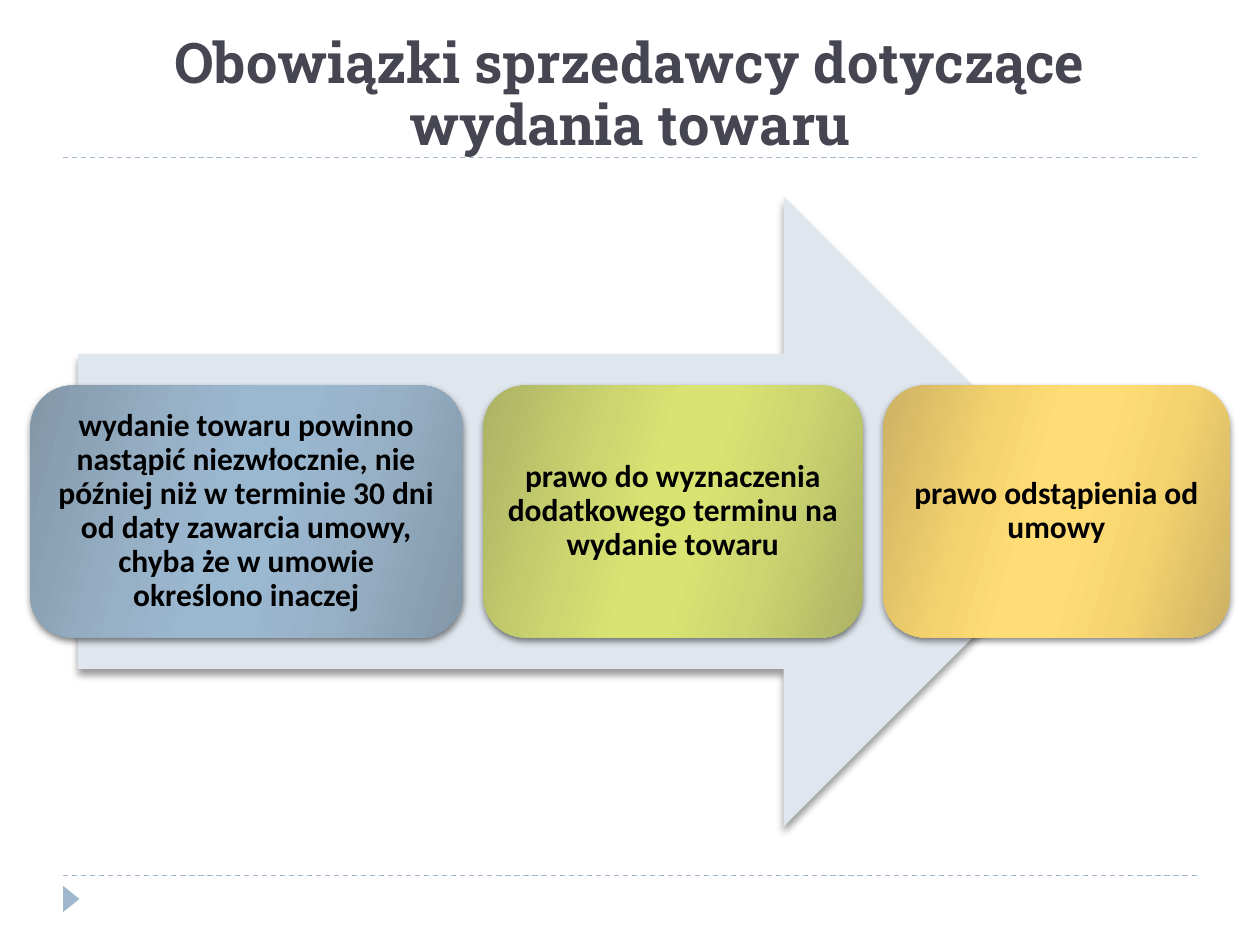
import pptx
import pptx.util
import pptx.dml.color
import pptx.enum.dml
import pptx.enum.shapes
import pptx.enum.text
import pptx.oxml.ns
from lxml import etree

Inches = pptx.util.Inches
Pt = pptx.util.Pt
RGBColor = pptx.dml.color.RGBColor
SHAPE = pptx.enum.shapes.MSO_SHAPE
ANCHOR = pptx.enum.text.MSO_ANCHOR
CENTER = pptx.enum.text.PP_ALIGN.CENTER
qn = pptx.oxml.ns.qn

INK = RGBColor(0x46, 0x46, 0x53)
BLACK = RGBColor(0, 0, 0)
STEEL = RGBColor(0x9F, 0xB8, 0xCD)
PALE = RGBColor(0xDF, 0xE6, 0xED)

# Edge, middle and centre colours of each card
BLUE = [RGBColor(0x82, 0x97, 0xA8), RGBColor(0x96, 0xB0, 0xC6), RGBColor(0x9B, 0xB8, 0xD1)]
GREEN = [RGBColor(0xAC, 0xB2, 0x64), RGBColor(0xCC, 0xD5, 0x70), RGBColor(0xD9, 0xE3, 0x71)]
GOLD = [RGBColor(0xCD, 0xB2, 0x64), RGBColor(0xF5, 0xD3, 0x6E), RGBColor(0xFF, 0xDC, 0x75)]
STOPS = [(0, 0), (30, 1), (45, 2), (55, 2), (73, 1), (100, 0)]

CARDS = [
    (3.43, BLUE, "wydanie towaru powinno nastąpić niezwłocznie, nie później niż w terminie "
                 "30 dni od daty zawarcia umowy, chyba że w umowie określono inaczej"),
    (3.01, GREEN, "prawo do wyznaczenia dodatkowego terminu na wydanie towaru"),
    (2.75, GOLD, "prawo odstąpienia od umowy"),
]


def add_shape(slide, kind, left, top, width, height):
    shape = slide.shapes.add_shape(
        kind, Inches(left), Inches(top), Inches(width), Inches(height))
    shape.shadow.inherit = False
    shape.line.fill.background()
    return shape


def set_solid(shape, color):
    shape.fill.solid()
    shape.fill.fore_color.rgb = color


def set_blend(shape, colors):
    """Fill with a slanted gradient that is lightest in the centre."""
    shape.fill.gradient()
    shape.fill.gradient_angle = 344
    stops = shape._element.spPr.find(".//" + qn("a:gsLst"))
    for old in list(stops):
        stops.remove(old)
    for place, tone in STOPS:
        stop = etree.SubElement(stops, qn("a:gs"), pos=str(place * 1000))
        etree.SubElement(stop, qn("a:srgbClr"), val=str(colors[tone]))


def drop_shadow(shape, dist, alpha):
    effects = shape._element.spPr.find(qn("a:effectLst"))
    shade = etree.SubElement(
        effects, qn("a:outerShdw"), blurRad=str(Pt(4)), dist=str(Pt(dist)),
        dir="5400000", rotWithShape="0")
    color = etree.SubElement(shade, qn("a:srgbClr"), val="000000")
    etree.SubElement(color, qn("a:alpha"), val=str(alpha * 1000))


def style_text(para, font, size, color, spacing):
    para.alignment = CENTER
    para.line_spacing = spacing
    para.font.name = font
    para.font.size = Pt(size)
    para.font.bold = True
    para.font.color.rgb = color


def add_rule(slide, left, top, width):
    rule = slide.shapes.add_connector(
        pptx.enum.shapes.MSO_CONNECTOR.STRAIGHT,
        Inches(left), Inches(top), Inches(left + width), Inches(top))
    rule.line.color.rgb = STEEL
    rule.line.width = Pt(0.75)
    rule.line.dash_style = pptx.enum.dml.MSO_LINE.DASH
    etree.SubElement(rule._element.spPr, qn("a:effectLst"))


def add_header(slide, left, top, width, height):
    add_rule(slide, left, top + height, width)
    title = slide.shapes.title
    title.left, title.top = Inches(left), Inches(top)
    title.width, title.height = Inches(width), Inches(height)
    frame = title.text_frame
    frame.text = "Obowiązki sprzedawcy dotyczące wydania towaru"
    frame.word_wrap = True
    frame.auto_size = pptx.enum.text.MSO_AUTO_SIZE.NONE
    frame.vertical_anchor = ANCHOR.BOTTOM
    frame.margin_top = frame.margin_bottom = 0
    style_text(frame.paragraphs[0], "Roboto Slab", 32, INK, 0.92)


def add_footer(slide, left, top, width):
    add_rule(slide, left, top, width)
    mark = add_shape(slide, SHAPE.ISOSCELES_TRIANGLE, left - 0.04, top + 0.12, 0.21, 0.13)
    mark.rotation = 90
    set_solid(mark, STEEL)


def add_card(slide, left, top, width, height, colors, text):
    card = add_shape(slide, SHAPE.ROUNDED_RECTANGLE, left, top, width, height)
    set_blend(card, colors)
    drop_shadow(card, 2, 50)
    frame = card.text_frame
    frame.text = text
    frame.word_wrap = True
    frame.vertical_anchor = ANCHOR.MIDDLE
    frame.margin_left = frame.margin_right = Inches(0.07)
    frame.margin_top = frame.margin_bottom = Inches(0.07)
    style_text(frame.paragraphs[0], "Calibri", 18, BLACK, 0.9)


def add_process(slide, left, top, width, height):
    """Place an arrow with a row of cards across its middle."""
    arrow = add_shape(slide, SHAPE.RIGHT_ARROW, left + 0.38, top, 8.1, height)
    set_solid(arrow, PALE)
    drop_shadow(arrow, 3.4, 40)
    tall = height * 0.4
    gap = (width - sum(card[0] for card in CARDS)) / (len(CARDS) - 1)
    for wide, colors, text in CARDS:
        add_card(slide, left, top + (height - tall) / 2, wide, tall, colors, text)
        left += wide + gap


def main():
    deck = pptx.Presentation()
    deck.slide_width, deck.slide_height = Inches(10), Inches(7.5)
    slide = deck.slides.add_slide(deck.slide_layouts[5])
    add_header(slide, 0.5, 0.17, 9, 1.08)
    add_footer(slide, 0.5, 6.95, 9)
    add_process(slide, 0.24, 1.56, 9.52, 5)
    deck.save("out.pptx")


if __name__ == "__main__":
    main()
